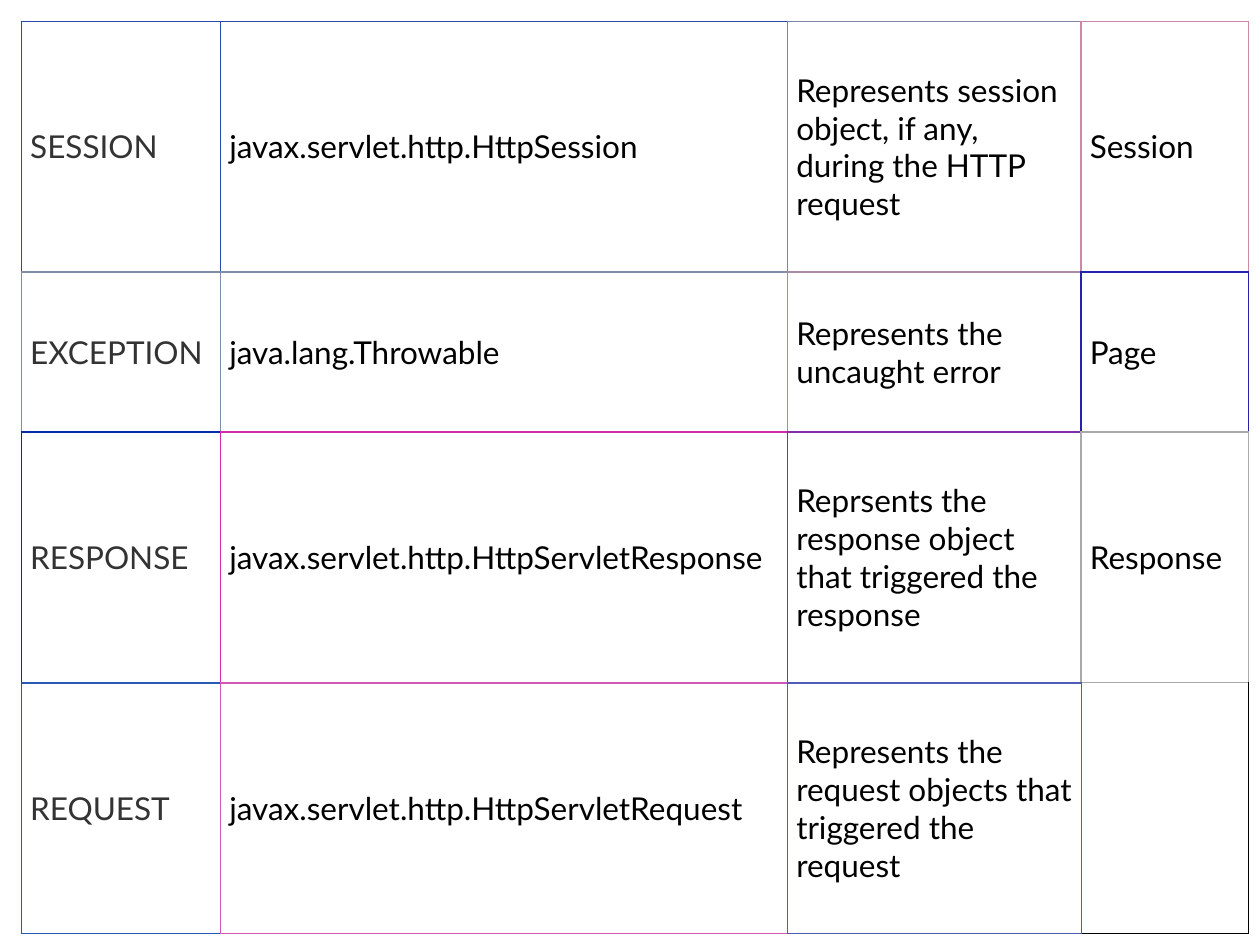
from dataclasses import dataclass

from lxml import etree
from pptx import Presentation
from pptx.dml.color import RGBColor
from pptx.enum.text import MSO_ANCHOR
from pptx.oxml.ns import qn
from pptx.util import Inches, Pt

MIDDLE = MSO_ANCHOR.MIDDLE


@dataclass(frozen=True)
class Theme:
    font: str = "Lato"
    size: int = 18
    label: str = "333333"
    text: str = "000000"
    paper: str = "FFFFFF"
    inner: float = 1
    outer: float = 0.75
    pad: float = 0.07


@dataclass(frozen=True)
class Entry:
    """One table row: its texts and the border colour of each cell."""
    texts: tuple[str, ...]
    hues: tuple[str, ...]


THEME = Theme()
WIDE, HIGH = 10, 7.5
EDGE = 0.17
COLS = (1.58, 4.5, 2.33, 1.33)
ROWS = (1.99, 1.27, 1.99, 1.99)
LAST_ROW, LAST_COL = len(ROWS) - 1, len(COLS) - 1

ENTRIES = (
    Entry(("SESSION", "javax.servlet.http.HttpSession",
           "Represents session object, if any, during the HTTP request",
           "Session"),
          ("284CA7", "284DA7", "8083A7", "D086A7")),
    Entry(("EXCEPTION", "java.lang.Throwable",
           "Represents the uncaught error", "Page"),
          ("808DA7", "808DA7", "A88CA7", "2821A9")),
    Entry(("RESPONSE", "javax.servlet.http.HttpServletResponse",
           "Reprsents the response object that triggered the response",
           "Response"),
          ("002BA9", "D02BA9", "802EA9", "A8A9A9")),
    Entry(("REQUEST", "javax.servlet.http.HttpServletRequest",
           "Represents the request objects that triggered the request", ""),
          ("2858B5", "D059B5", "505CB5", "000000")),
)


def add_line(cell, side: str, hue: str, width: float) -> None:
    props = cell._tc.get_or_add_tcPr()
    line = etree.SubElement(props, qn(f"a:ln{side}"), w=str(Pt(width)))
    fill = etree.SubElement(line, qn("a:solidFill"))
    etree.SubElement(fill, qn("a:srgbClr"), val=hue)


def hue_at(row: int, col: int) -> str:
    return ENTRIES[row].hues[col]


def draw_edges(cell, row: int, col: int) -> None:
    """A cell owns its left and top; its neighbours own the other sides."""
    def is_blank(r: int, c: int) -> bool:
        return (r, c) == (LAST_ROW, LAST_COL)

    def side(name: str, r: int, c: int) -> None:
        beyond = r > LAST_ROW or c > LAST_COL
        own = beyond or is_blank(r, c)
        hue = hue_at(row, col) if own else hue_at(r, c)
        add_line(cell, name, hue, THEME.outer if own else THEME.inner)

    if is_blank(row, col):
        add_line(cell, "L", hue_at(row, col - 1), THEME.outer)
        side("R", row, col + 1)
        add_line(cell, "T", hue_at(row - 1, col), THEME.outer)
    else:
        side("L", row, col)
        side("R", row, col + 1)
        side("T", row, col)
    side("B", row + 1, col)


def fill_cell(cell, text: str, hue: str) -> None:
    cell.fill.solid()
    cell.fill.fore_color.rgb = RGBColor.from_string(THEME.paper)
    cell.vertical_anchor = MIDDLE
    cell.margin_left = cell.margin_right = Inches(THEME.pad)
    cell.margin_top = cell.margin_bottom = Inches(THEME.pad)
    cell.text = text
    font = cell.text_frame.paragraphs[0].font
    font.name, font.size = THEME.font, Pt(THEME.size)
    font.color.rgb = RGBColor.from_string(hue)


def draw_table(slide) -> None:
    frame = slide.shapes.add_table(
        len(ROWS), len(COLS), Inches(EDGE), Inches(EDGE),
        Inches(sum(COLS)), Inches(sum(ROWS)))
    table = frame.table
    table.first_row = table.horz_banding = False
    for col, width in zip(table.columns, COLS):
        col.width = Inches(width)
    for row, height in zip(table.rows, ROWS):
        row.height = Inches(height)
    for r, entry in enumerate(ENTRIES):
        for c, text in enumerate(entry.texts):
            cell = table.cell(r, c)
            draw_edges(cell, r, c)
            fill_cell(cell, text, THEME.text if c else THEME.label)


def main() -> None:
    deck = Presentation()
    deck.slide_width, deck.slide_height = Inches(WIDE), Inches(HIGH)
    # Blank layout with the table of implicit objects
    slide = deck.slides.add_slide(deck.slide_layouts[6])
    draw_table(slide)
    deck.save("out.pptx")


if __name__ == "__main__":
    main()
